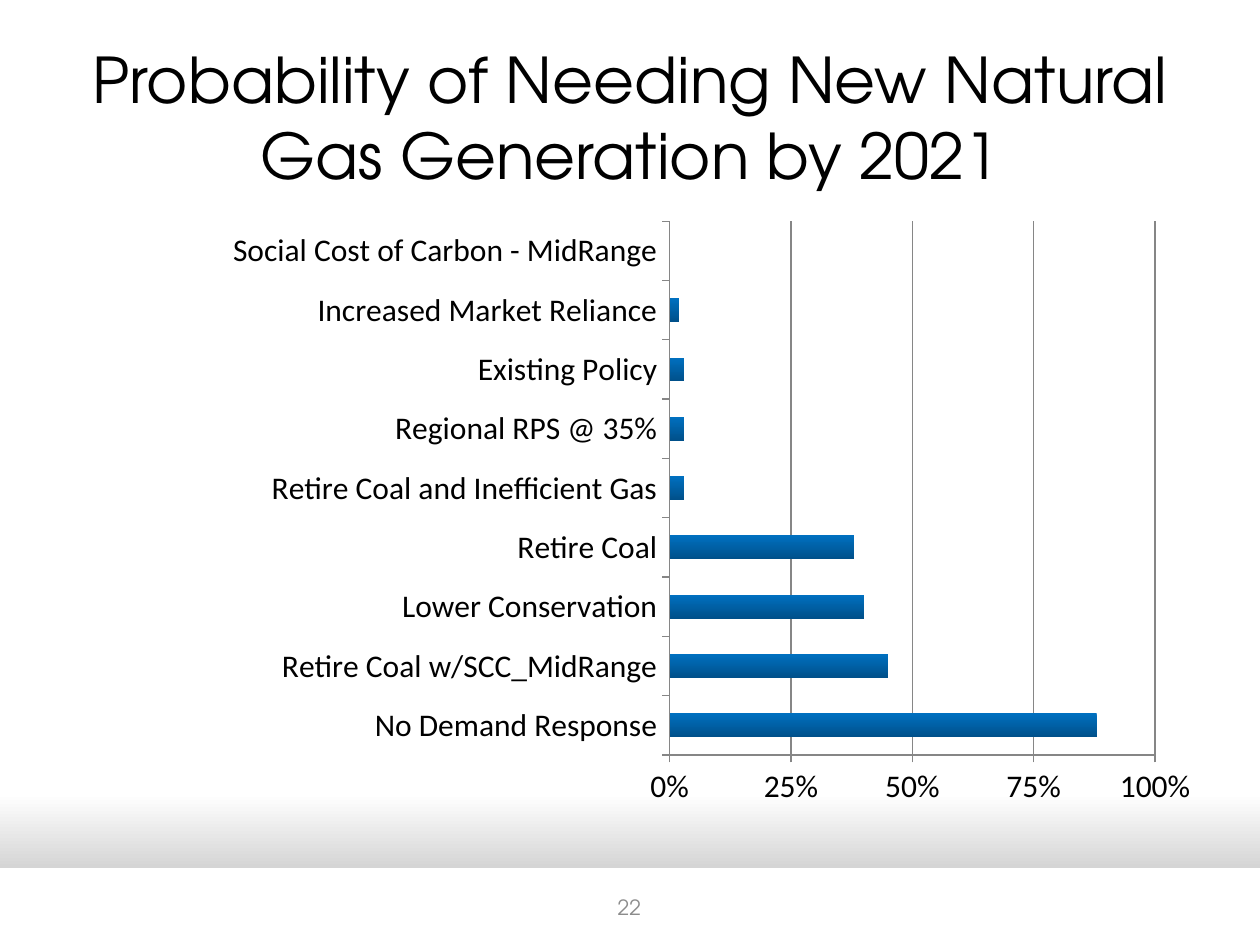
from lxml.etree import SubElement
from pptx import Presentation
from pptx.chart.data import CategoryChartData
from pptx.dml.color import RGBColor as RGB
from pptx.enum.chart import XL_CHART_TYPE as ChartType, XL_TICK_MARK as Tick
from pptx.enum.shapes import MSO_SHAPE as Shape
from pptx.enum.text import MSO_ANCHOR as Anchor, PP_ALIGN as Align
from pptx.oxml.ns import qn
from pptx.util import Inches, Pt

# Content
TITLE = "Probability of Needing New Natural Gas Generation by 2021"
PAGE = "22"
PROBABILITIES = [  # bottom bar first
    ("No Demand Response", 0.88),
    ("Retire Coal w/SCC_MidRange", 0.45),
    ("Lower Conservation", 0.4),
    ("Retire Coal", 0.38),
    ("Retire Coal and Inefficient Gas", 0.03),
    ("Regional RPS @ 35%", 0.03),
    ("Existing Policy", 0.03),
    ("Increased Market Reliance", 0.02),
    ("Social Cost of Carbon - MidRange", 0),
]
PLOT = {"x": 0.535, "y": 0, "w": 0.428, "h": 0.857}

THEME = {
    "font": "TeX Gyre Adventor", "chart_font": "Calibri",
    "title": 36, "chart": 18, "page": 12,
    "text": RGB(0, 0, 0), "muted": RGB(0x8C, 0x8C, 0x8C),
    "white": RGB(255, 255, 255), "shade": RGB(0xA6, 0xA6, 0xA6),
    "bar": RGB(0, 0x70, 0xC0), "bar_dark": RGB(0, 0x50, 0x8A),
    "line": RGB(0x86, 0x86, 0x86),
}


def fill_downward(fill, *stops):
    fill.gradient()
    fill.gradient_angle = 270
    for stop, (position, color) in zip(fill.gradient_stops, stops):
        stop.position = position
        stop.color.rgb = color


def add_text(slide, box, text, size, color):
    tf = slide.shapes.add_textbox(*map(Inches, box)).text_frame
    tf.word_wrap = True
    tf.vertical_anchor = Anchor.MIDDLE
    tf.text = text
    p = tf.paragraphs[0]
    p.alignment = Align.CENTER
    font = p.runs[0].font
    font.name, font.size = THEME["font"], Pt(size)
    font.color.rgb = color


def set_plot_layout(chart):
    plot_area = chart.plots[0]._element.getparent()
    layout = plot_area.find(qn("c:layout"))
    if layout is None:
        layout = SubElement(plot_area, qn("c:layout"))
        plot_area.insert(0, layout)
    manual = SubElement(layout, qn("c:manualLayout"))
    values = {"layoutTarget": "inner", "xMode": "edge", "yMode": "edge", **PLOT}
    for tag, value in values.items():
        SubElement(manual, qn(f"c:{tag}")).set("val", str(value))


def add_bar_chart(slide):
    data = CategoryChartData(number_format="0%")
    data.categories = [name for name, _ in PROBABILITIES]
    data.add_series("Series 1", [value for _, value in PROBABILITIES])
    box = map(Inches, (0.5, 1.75, 9, 4.95))
    chart = slide.shapes.add_chart(ChartType.BAR_CLUSTERED, *box, data).chart
    chart.has_legend = chart.has_title = False
    chart.font.name, chart.font.size = THEME["chart_font"], Pt(THEME["chart"])
    chart.font.color.rgb = THEME["text"]
    set_plot_layout(chart)

    # Bars
    plot = chart.plots[0]
    plot.gap_width = 150
    plot.vary_by_categories = False
    series = plot.series[0]
    series.invert_if_negative = False
    fill_downward(series.format.fill, (0, THEME["bar"]), (1, THEME["bar_dark"]))

    # Axes
    values = chart.value_axis
    values.minimum_scale, values.maximum_scale, values.major_unit = 0, 1, 0.25
    values.has_major_gridlines = True
    values.tick_labels.number_format = "0%"
    values.tick_labels.number_format_is_linked = False
    for axis in (chart.category_axis, values):
        axis.major_tick_mark, axis.minor_tick_mark = Tick.OUTSIDE, Tick.NONE
    for part in (chart.category_axis, values, values.major_gridlines):
        part.format.line.color.rgb = THEME["line"]
        part.format.line.width = Pt(0.75)


def main():
    prs = Presentation()
    prs.slide_width, prs.slide_height = Inches(10), Inches(7.5)
    slide = prs.slides.add_slide(prs.slide_layouts[6])

    # Background and footer band
    fill_downward(slide.background.fill, (0.84, THEME["white"]), (1, THEME["shade"]))
    sp = slide.shapes.add_shape(Shape.RECTANGLE, *map(Inches, (0, 6.89, 10, 0.61)))
    sp.shadow.inherit = False
    sp.fill.solid()
    sp.fill.fore_color.rgb = THEME["white"]
    sp.line.fill.background()

    # Title, chart, page number
    add_text(slide, (0.5, 0.3, 9, 1.25), TITLE, THEME["title"], THEME["text"])
    add_bar_chart(slide)
    add_text(slide, (3.83, 7, 2.33, 0.4), PAGE, THEME["page"], THEME["muted"])
    prs.save("out.pptx")


if __name__ == "__main__":
    main()
